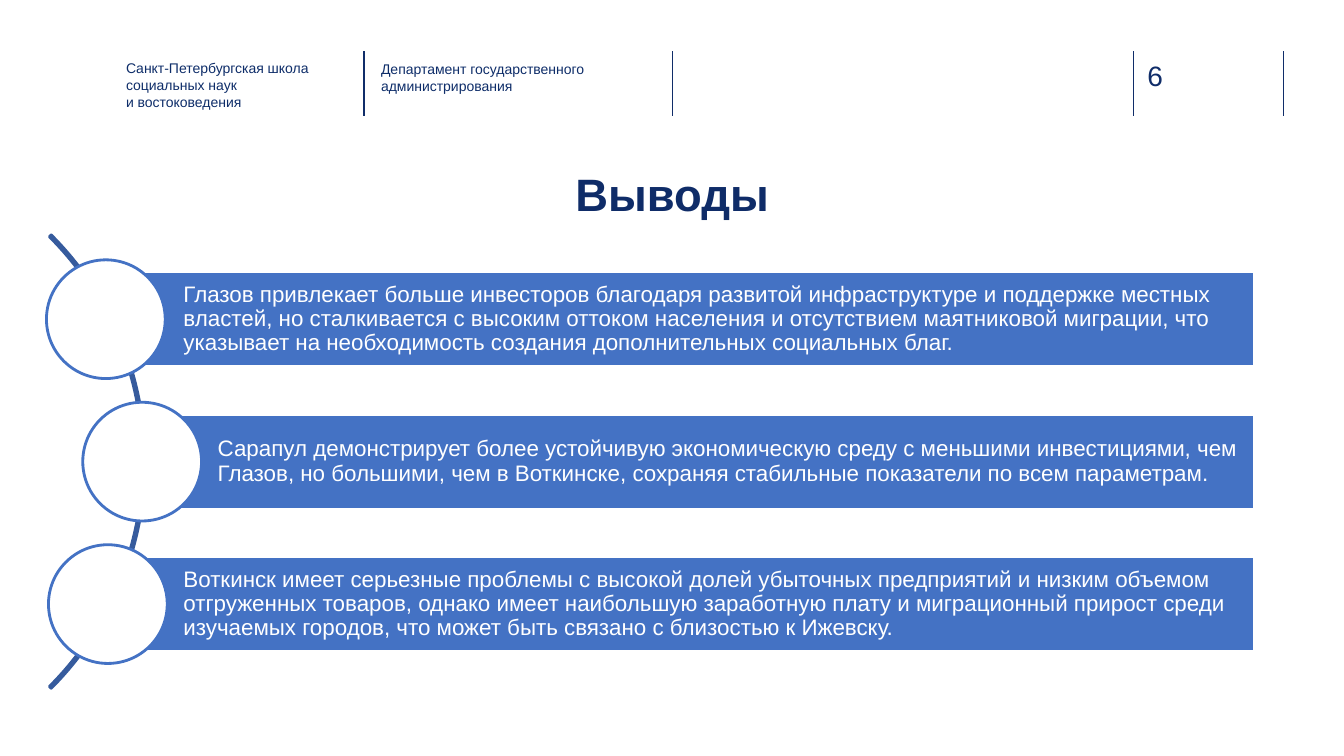
import pptx
import pptx.dml.color
import pptx.enum.shapes
import pptx.enum.text
import pptx.util
from lxml import etree

Inches = pptx.util.Inches
RGBColor = pptx.dml.color.RGBColor
Shape = pptx.enum.shapes.MSO_SHAPE
Align = pptx.enum.text.PP_ALIGN
Anchor = pptx.enum.text.MSO_ANCHOR

NAVY = RGBColor(0x10, 0x2D, 0x69)
HEADER_NAVY = RGBColor(0x0E, 0x2D, 0x69)
TITLE_NAVY = RGBColor(0x0F, 0x2C, 0x68)
BLUE = RGBColor(0x44, 0x72, 0xC4)
ARC_BLUE = RGBColor(0x36, 0x5B, 0x9D)
WHITE = RGBColor(0xFF, 0xFF, 0xFF)

SLIDE_WIDTH, SLIDE_HEIGHT = 13.33, 7.5

# Left edge of the bar, centre of its circle, text
CONCLUSIONS = [
    (1.07, 1.05, "Глазов привлекает больше инвесторов благодаря развитой инфраструктуре "
     "и поддержке местных властей, но сталкивается с высоким оттоком населения "
     "и отсутствием маятниковой миграции, что указывает на необходимость создания "
     "дополнительных социальных благ."),
    (1.41, 1.41, "Сарапул демонстрирует более устойчивую экономическую среду с меньшими "
     "инвестициями, чем Глазов, но большими, чем в Воткинске, сохраняя стабильные "
     "показатели по всем параметрам."),
    (1.07, 1.07, "Воткинск имеет серьезные проблемы с высокой долей убыточных предприятий "
     "и низким объемом отгруженных товаров, однако имеет наибольшую заработную плату "
     "и миграционный прирост среди изучаемых городов, что может быть связано "
     "с близостью к Ижевску."),
]


def apply_format(target, values):
    for name, value in values.items():
        setattr(target, name, value)


def write_text(shape, lines, size, color, align=Align.LEFT, anchor=Anchor.TOP,
               margins=(0, 0, 0, 0), spacing=1.0, bold=False):
    """Fill the shape with one paragraph whose lines are parted by line breaks."""
    left, top, right, bottom = map(Inches, margins)
    frame = shape.text_frame
    apply_format(frame, {
        "word_wrap": True, "vertical_anchor": anchor, "margin_left": left,
        "margin_top": top, "margin_right": right, "margin_bottom": bottom})
    paragraph = frame.paragraphs[0]
    apply_format(paragraph, {"alignment": align, "line_spacing": spacing})
    for index, line in enumerate(lines):
        if index:
            paragraph.add_line_break()
        run = paragraph.add_run()
        run.text = line
        apply_format(run.font, {
            "name": "Arial", "size": pptx.util.Pt(size), "bold": bold})
        run.font.color.rgb = color


def add_text(slide, box, lines, size, color, **options):
    shape = slide.shapes.add_textbox(*map(Inches, box))
    write_text(shape, lines, size, color, **options)


def add_outlined_shape(slide, preset, box, line_color, fill_color=None):
    shape = slide.shapes.add_shape(preset, *map(Inches, box))
    shape.shadow.inherit = False
    if fill_color is None:
        shape.fill.background()
    else:
        shape.fill.solid()
        shape.fill.fore_color.rgb = fill_color
    shape.line.color.rgb = line_color
    shape.line.width = pptx.util.Pt(2)
    return shape


def add_divider(slide, x, top, height):
    line = slide.shapes.add_connector(
        pptx.enum.shapes.MSO_CONNECTOR.STRAIGHT,
        Inches(x), Inches(top), Inches(x), Inches(top + height))
    line.line.color.rgb = NAVY
    line.line.width = pptx.util.Pt(1)
    etree.SubElement(line._element.spPr, pptx.oxml.ns.qn("a:effectLst"))


def add_header(slide, left, top, width, height):
    right = left + width
    for x in (left + 2.36, left + 5.42, right - 1.49, right):
        add_divider(slide, x, top, height)
    text_top = top + 0.08
    add_text(slide, (left, text_top, 2.08, 0.45),
             ["Санкт-Петербургская школа социальных наук", "и востоковедения"],
             10, HEADER_NAVY)
    add_text(slide, (left + 2.53, text_top + 0.01, 2.26, 0.45),
             ["Департамент государственного администрирования"], 10, HEADER_NAVY)
    add_text(slide, (right - 1.35, text_top - 0.01, 0.73, 0.34), ["6"], 20, NAVY)


def add_conclusions(slide, left, top, diameter, right):
    """Place an arc of a large circle, with one bar and one small circle per item."""
    arc = add_outlined_shape(
        slide, Shape.BLOCK_ARC, (left, top, diameter, diameter), ARC_BLUE)
    for index, value in enumerate((189, 27, 0.004)):
        arc.adjustments[index] = value

    pitch = diameter / 4.5
    bar_height = pitch * 2 / 3
    circle = bar_height * 1.25
    for row, (bar_left, circle_x, text) in enumerate(CONCLUSIONS):
        middle = top + diameter / 2 + (row - 1) * pitch
        bar = add_outlined_shape(
            slide, Shape.RECTANGLE,
            (bar_left, middle - bar_height / 2, right - bar_left, bar_height), WHITE, BLUE)
        write_text(bar, [text], 16, WHITE, anchor=Anchor.MIDDLE,
                   margins=(0.75, 0.04, 0.04, 0.04), spacing=0.9)
        add_outlined_shape(
            slide, Shape.OVAL,
            (circle_x - circle / 2, middle - circle / 2, circle, circle), BLUE, WHITE)


def main():
    presentation = pptx.Presentation()
    presentation.slide_width = Inches(SLIDE_WIDTH)
    presentation.slide_height = Inches(SLIDE_HEIGHT)
    slide = presentation.slides.add_slide(presentation.slide_layouts[6])
    add_header(slide, 1.25, 0.51, 11.48, 0.64)
    add_text(slide, (0.62, 1.62, 12.09, 0.59), ["Выводы"], 32.4, TITLE_NAVY,
             align=Align.CENTER, anchor=Anchor.MIDDLE, bold=True)
    add_conclusions(slide, -4.92, 1.4, 6.36, 12.44)
    presentation.save("out.pptx")


if __name__ == "__main__":
    main()
